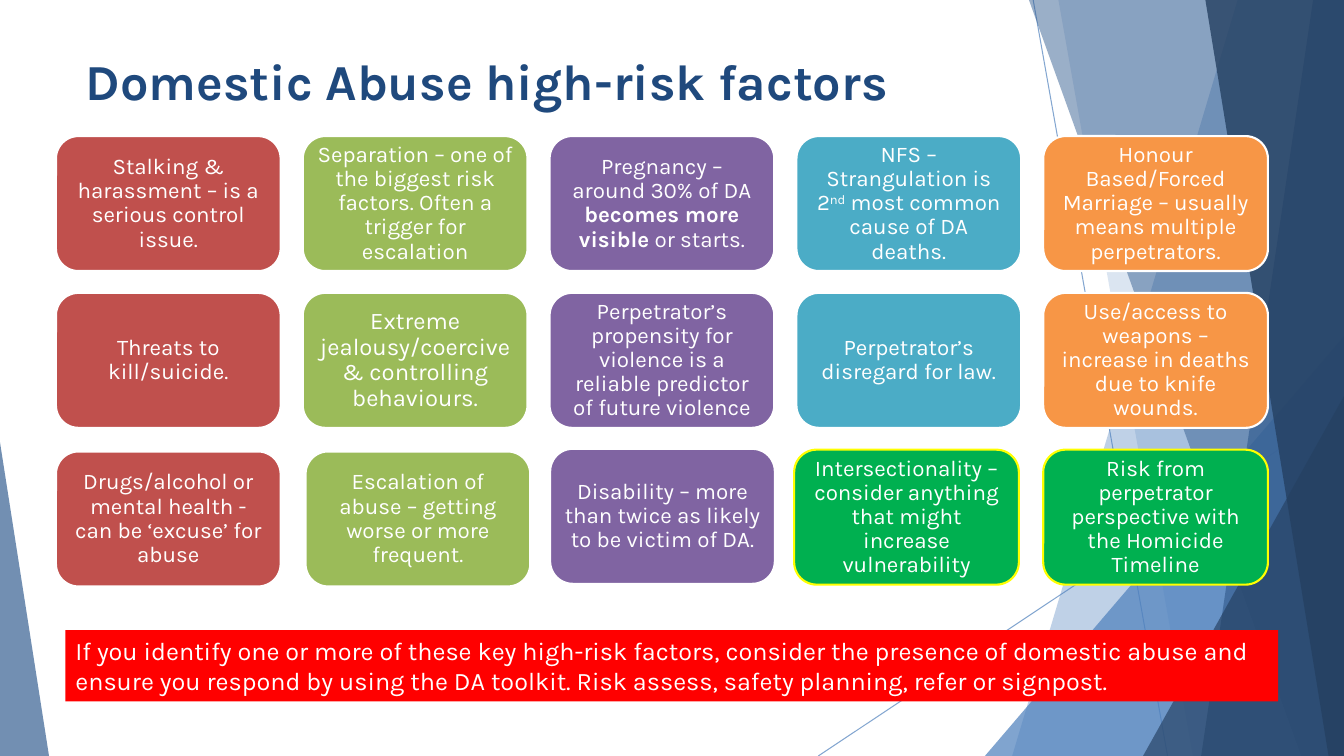
from lxml.etree import SubElement
from pptx import Presentation
from pptx.dml.color import RGBColor
from pptx.enum.shapes import MSO_CONNECTOR, MSO_SHAPE
from pptx.enum.text import MSO_ANCHOR, PP_ALIGN
from pptx.oxml.ns import qn
from pptx.util import Pt

W, H = 960, 540
COLORS = {
    "blue": "4F81BD", "steel": "376092", "navy": "254061", "title": "1F497D",
    "red": "C0504D", "lime": "9BBB59", "purple": "8064A2", "aqua": "4BACC6",
    "orange": "F79646", "green": "00B050", "yellow": "FFFF00",
    "alert": "FF0000", "white": "FFFFFF",
}
RAYS = [((738, 0), (834, 540)), ((960, 290), (584.5, 540))]
FACETS = [
    ("slab", (884, 723), "blue", 36),
    ("slab", (756, 852), "blue", 20),
    ("triangle", (703.5, 240, 256.5, 300, 1), "blue", 72),
    ("slab", (735, 929.5), "steel", 50),
    ("slab", (938, 858), "steel", 70),
    ("slab", (861, 949), "navy", 80),
    ("triangle", (816.5, 283, 143.5, 257, 1), "navy", 66),
    ("triangle", (0, 316, 35, 224, 0), "steel", 70),
]
CARDS = [
    [
        ("red", ["Stalking & harassment – is a serious control issue."]),
        ("lime", ["Separation – one of the biggest risk factors. Often a trigger for escalation"]),
        ("purple", ["Pregnancy – around 30% of DA ", ("becomes more visible", "bold"), " or starts."]),
        ("aqua", ["NFS – Strangulation is 2", ("nd", "super"), " most common cause of DA deaths."]),
        ("orange", ["Honour Based/Forced Marriage – usually means multiple perpetrators."]),
    ],
    [
        ("red", ["Threats to kill/suicide."]),
        ("lime", ["Extreme jealousy/coercive & controlling behaviours."]),
        ("purple", ["Perpetrator’s propensity for violence is a reliable predictor of future violence"]),
        ("aqua", ["Perpetrator’s disregard for law."]),
        ("orange", ["Use/access to weapons – increase in deaths due to knife wounds."]),
    ],
    [
        ("red", ["Drugs/alcohol or mental health - can be ‘excuse’ for abuse"]),
        ("lime", ["Escalation of abuse – getting worse or more frequent."]),
        ("purple", ["Disability – more than twice as likely to be victim of DA."]),
        ("green", ["Intersectionality – consider anything that might increase vulnerability"]),
        ("green", ["Risk from perpetrator perspective with the Homicide Timeline"]),
    ],
]
NUDGES = {(2, 0): (0, 1.3), (2, 1): (2, 1.3), (2, 2): (0.4, -0.6), (2, 3): (-1.6, 0)}
SIZES = {(1, 1): 17}


def rgb(name):
    """Return the named colour."""
    return RGBColor.from_string(COLORS[name])


def set_alpha(fill, percent):
    """Make the solid colour below an element see-through."""
    color = next(fill.iter(qn("a:srgbClr")))
    SubElement(color, qn("a:alpha"), val=str(percent * 1000))


def paint(sp, fill, line=None):
    """Give a shape a flat fill and an optional outline."""
    sp.shadow.inherit = False
    sp.fill.solid()
    sp.fill.fore_color.rgb = rgb(fill)
    if line:
        sp.line.color.rgb = rgb(line)
        sp.line.width = Pt(1.5)
    else:
        sp.line.fill.background()


def write(sp, parts, size, color="white", bold=False, frame=None, para=None):
    """Write one paragraph of plain, bold or superscript parts."""
    tf = sp.text_frame
    for name, value in {"word_wrap": True, "vertical_anchor": MSO_ANCHOR.TOP, **(frame or {})}.items():
        setattr(tf, name, value)
    p = tf.paragraphs[0]
    for name, value in {"alignment": PP_ALIGN.LEFT, **(para or {})}.items():
        setattr(p, name, value)
    for part in parts:
        text, style = part if isinstance(part, tuple) else (part, None)
        r = p.add_run()
        r.text = text
        font = {"name": "Karla", "size": Pt(size), "bold": bold or style == "bold"}
        for name, value in font.items():
            setattr(r.font, name, value)
        r.font.color.rgb = rgb(color)
        if style == "super":
            r.font._element.set("baseline", "30000")


def add_backdrop(s, x, y, w, h):
    """Draw the thin rays and translucent facets in the given box."""
    for (x1, y1), (x2, y2) in RAYS:
        ray = s.shapes.add_connector(
            MSO_CONNECTOR.STRAIGHT, Pt(x + x1), Pt(y + y1), Pt(x + x2), Pt(y + y2))
        ray.line.color.rgb = rgb("blue")
        ray.line.width = Pt(0.75)
        set_alpha(ray._element.spPr, 70)
        SubElement(ray._element.spPr, qn("a:effectLst"))
    for kind, dims, color, alpha in FACETS:
        if kind == "slab":
            top, bottom = dims
            fb = s.shapes.build_freeform(Pt(x + top), Pt(y))
            corners = [(x + w, y), (x + w, y + h), (x + bottom, y + h)]
            fb.add_line_segments([(Pt(cx), Pt(cy)) for cx, cy in corners], close=True)
            sp = fb.convert_to_shape()
        else:
            left, top, width, height, apex = dims
            sp = s.shapes.add_shape(
                MSO_SHAPE.ISOSCELES_TRIANGLE, Pt(x + left), Pt(y + top), Pt(width), Pt(height))
            sp.adjustments[0] = apex
        paint(sp, color)
        set_alpha(sp._element.spPr, alpha)


def add_title(s, x, y, w, h):
    """Place the slide title."""
    sp = s.shapes.add_textbox(Pt(x), Pt(y), Pt(w), Pt(h))
    write(sp, ["Domestic Abuse high-risk factors"], 36, "title", True)


def add_cards(s, x, y, w, h):
    """Lay out the risk factor cards on a grid that fills the box."""
    cw, ch = 160.5, 96.4
    dx = (w - cw) / (len(CARDS[0]) - 1)
    dy = (h - ch) / (len(CARDS) - 1)
    margins = ("margin_left", "margin_right", "margin_top", "margin_bottom")
    frame = {"vertical_anchor": MSO_ANCHOR.MIDDLE, **{m: Pt(5) for m in margins}}
    para = {"alignment": PP_ALIGN.CENTER, "line_spacing": 0.9}
    for i, row in enumerate(CARDS):
        for j, (color, parts) in enumerate(row):
            nx, ny = NUDGES.get((i, j), (0, 0))
            sp = s.shapes.add_shape(
                MSO_SHAPE.ROUNDED_RECTANGLE,
                Pt(x + j * dx + nx), Pt(y + i * dy + ny), Pt(cw), Pt(ch))
            paint(sp, color, "yellow" if color == "green" else "white")
            write(sp, parts, SIZES.get((i, j), 16), frame=frame, para=para)


def add_banner(s, x, y, w, h):
    """Place the call to action bar."""
    sp = s.shapes.add_shape(MSO_SHAPE.RECTANGLE, Pt(x), Pt(y), Pt(w), Pt(h))
    paint(sp, "alert")
    write(sp, ["If you identify one or more of these key high-risk factors, consider the "
               "presence of domestic abuse and ensure you respond by using the DA toolkit. "
               "Risk assess, safety planning, refer or signpost."], 18)


def main():
    """Build and save the slide."""
    prs = Presentation()
    prs.slide_width, prs.slide_height = Pt(W), Pt(H)
    s = prs.slides.add_slide(prs.slide_layouts[6])
    add_backdrop(s, 0, 0, W, H)
    add_title(s, 54, 32.4, 754.5, 80)
    add_cards(s, 40, 97.2, 865.7, 320.4)
    add_banner(s, 46.8, 450, 866.2, 51)
    prs.save("out.pptx")


if __name__ == "__main__":
    main()
